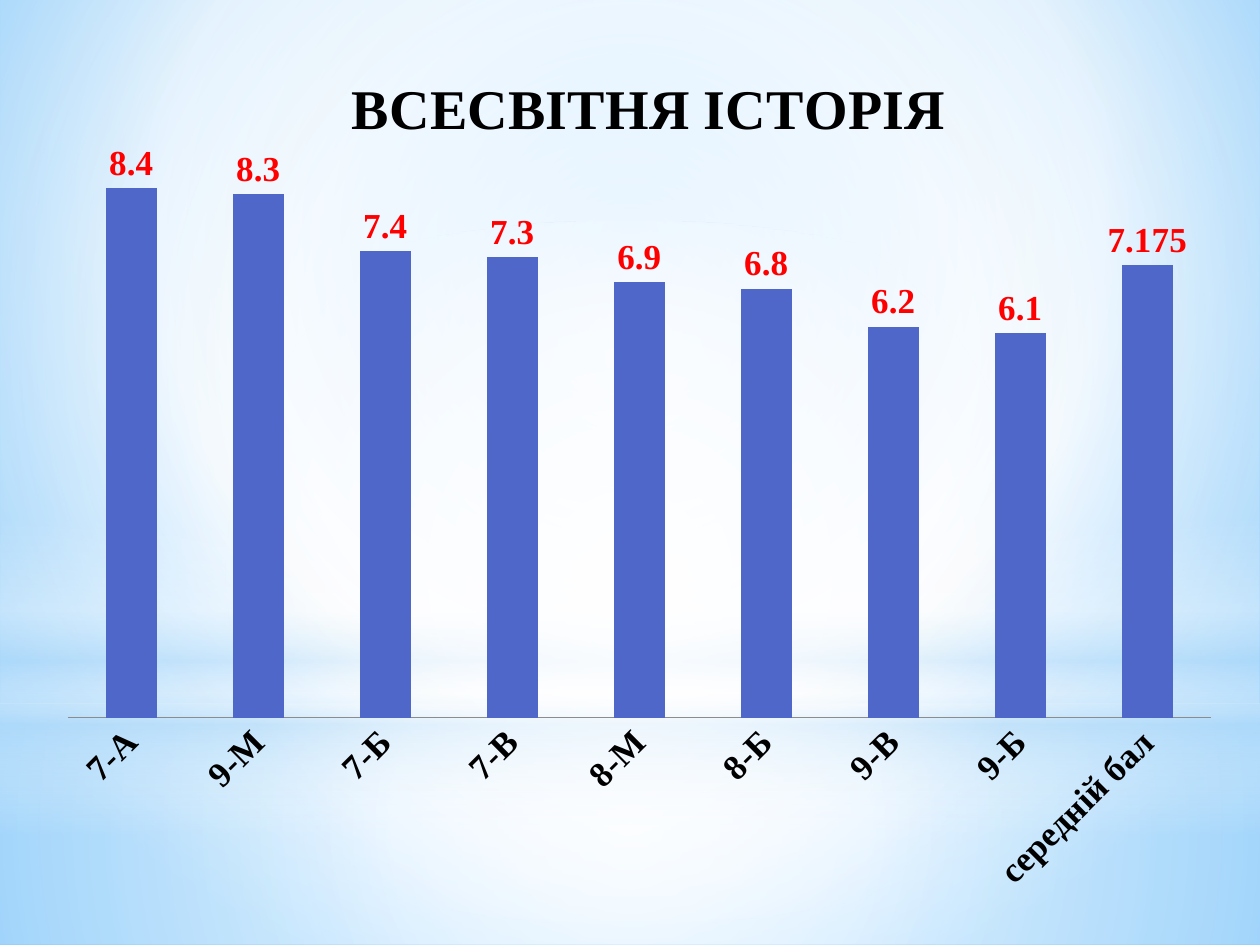
import pptx
import pptx.chart.data
import pptx.dml.color
import pptx.enum.chart
import pptx.enum.shapes
import pptx.oxml
import pptx.oxml.ns
import pptx.util

Pt = pptx.util.Pt
RGB = pptx.dml.color.RGBColor
Shape = pptx.enum.shapes.MSO_SHAPE
Chart = pptx.enum.chart
qn = pptx.oxml.ns.qn

WHITE = RGB(0xFF, 0xFF, 0xFF)
PALE = RGB(0xB4, 0xDC, 0xFA)
SKY = RGB(0x9E, 0xD5, 0xFF)
AZURE = RGB(0x5B, 0xB9, 0xFF)
BLUE = RGB(0x4E, 0x67, 0xC8)
GREY = RGB(0x8C, 0x8C, 0x8C)
BLACK = RGB(0, 0, 0)
RED = RGB(0xFF, 0, 0)
SERIF = "Times New Roman"
MID = (50, 50, 50, 50)

MARKS = {
    "7-А": 8.4, "9-М": 8.3, "7-Б": 7.4, "7-В": 7.3, "8-М": 6.9,
    "8-Б": 6.8, "9-В": 6.2, "9-Б": 6.1, "середній бал": 7.175,
}


def shade(fill, root, stops, focus=None):
    """Fill with stops of (position, colour, opacity), round a focus or downwards."""
    fill.gradient()
    grad = next(root.iter(qn("a:gradFill")))
    marks = "".join(
        f'<a:gs pos="{pos * 1000}"><a:srgbClr val="{tint}">'
        f'<a:alpha val="{alpha * 1000}"/></a:srgbClr></a:gs>'
        for pos, tint, alpha in stops)
    if focus:
        sides = " ".join(f'{side}="{part * 1000}"' for side, part in zip("ltrb", focus))
        way = f'<a:path path="circle"><a:fillToRect {sides}/></a:path>'
    else:
        way = '<a:lin ang="5400000" scaled="0"/>'
    grad.getparent().replace(grad, pptx.oxml.parse_xml(
        f'<a:gradFill {pptx.oxml.ns.nsdecls("a")} rotWithShape="1">'
        f'<a:gsLst>{marks}</a:gsLst>{way}</a:gradFill>'))


def glow(slide, kind, top, height, stops, focus=None):
    """Add a full-width shape with a soft gradient."""
    shape = slide.shapes.add_shape(kind, Pt(0), Pt(top), Pt(720), Pt(height))
    shape.shadow.inherit = False
    shape.line.fill.background()
    shade(shape.fill, shape.element, stops, focus)


def style(font, size, color=BLACK, bold=True, name=SERIF):
    """Format a font."""
    font.size, font.bold, font.name = Pt(size), bold, name
    font.color.rgb = color


def write(frame, text, **form):
    """Put formatted text in a frame."""
    run = frame.paragraphs[0].add_run()
    run.text = text
    style(run.font, **form)


def place(node, index, **spots):
    """Set the manual layout of a chart part, in shares of the chart."""
    for old in node.findall(qn("c:layout")):
        node.remove(old)
    parts = "".join(f'<c:{key} val="{val}"/>' for key, val in spots.items())
    node.insert(index, pptx.oxml.parse_xml(
        f'<c:layout {pptx.oxml.ns.nsdecls("c")}><c:manualLayout>'
        f'{parts}</c:manualLayout></c:layout>'))


def plot(slide):
    """Add the column chart of marks."""
    data = pptx.chart.data.CategoryChartData()
    data.categories = list(MARKS)
    data.add_series("Series 1", list(MARKS.values()))
    chart = slide.shapes.add_chart(
        Chart.XL_CHART_TYPE.COLUMN_CLUSTERED,
        Pt(25.2), Pt(20.9), Pt(680.4), Pt(499), data).chart
    style(chart.font, 10, bold=False, name="Karla")
    chart.has_legend = False
    chart.has_title = True
    title = chart.chart_title
    write(title.text_frame, "ВСЕСВІТНЯ ІСТОРІЯ", size=32)
    title.include_in_layout = False
    edge = {"xMode": "edge", "yMode": "edge"}
    place(title._element, 1, **edge, x=0.25, y=0.03)
    place(chart.plots[0]._element.getparent(), 0, layoutTarget="inner",
          **edge, x=0.02, y=0.13, w=0.96, h=0.65)

    bars = chart.plots[0]
    bars.gap_width = 150
    bars.vary_by_categories = False
    fill = bars.series[0].format.fill
    fill.solid()
    fill.fore_color.rgb = BLUE
    bars.has_data_labels = True
    labels = bars.data_labels
    labels.show_value = True
    labels.position = Chart.XL_LABEL_POSITION.OUTSIDE_END
    style(labels.font, 20, RED)

    axis = chart.category_axis
    axis.major_tick_mark = Chart.XL_TICK_MARK.NONE
    axis.format.line.color.rgb = GREY
    axis.format.line.width = Pt(0.75)
    style(axis.tick_labels.font, 20)
    body = axis._element.find(qn("c:txPr")).find(qn("a:bodyPr"))
    body.set("rot", "-2700000")
    body.set("vert", "horz")
    scale = chart.value_axis
    scale.minimum_scale, scale.maximum_scale = 0, 9
    scale.has_major_gridlines = False
    scale.visible = False


def main():
    """Build the slide."""
    deck = pptx.Presentation()
    deck.slide_width, deck.slide_height = Pt(720), Pt(540)
    slide = deck.slides.add_slide(deck.slide_layouts[6])
    shade(slide.background.fill, slide.element,
          [(0, SKY, 100), (60, WHITE, 100), (100, AZURE, 100)], (20, 10, 20, 60))
    glow(slide, Shape.RECTANGLE, 401.8, 138.2,
         [(0, WHITE, 91), (37, WHITE, 76), (100, PALE, 79)], MID)
    glow(slide, Shape.RECTANGLE, 0, 401.8,
         [(0, WHITE, 89), (48, WHITE, 62), (100, PALE, 79)], MID)
    glow(slide, Shape.RECTANGLE, 296.6, 180,
         [(0, WHITE, 0), (29, WHITE, 30), (45, PALE, 40),
          (55, WHITE, 26), (65, PALE, 60), (100, WHITE, 0)])
    glow(slide, Shape.OVAL, 126, 401.8, [(0, WHITE, 100), (56, WHITE, 0)], MID)
    plot(slide)
    deck.save("out.pptx")


if __name__ == "__main__":
    main()
